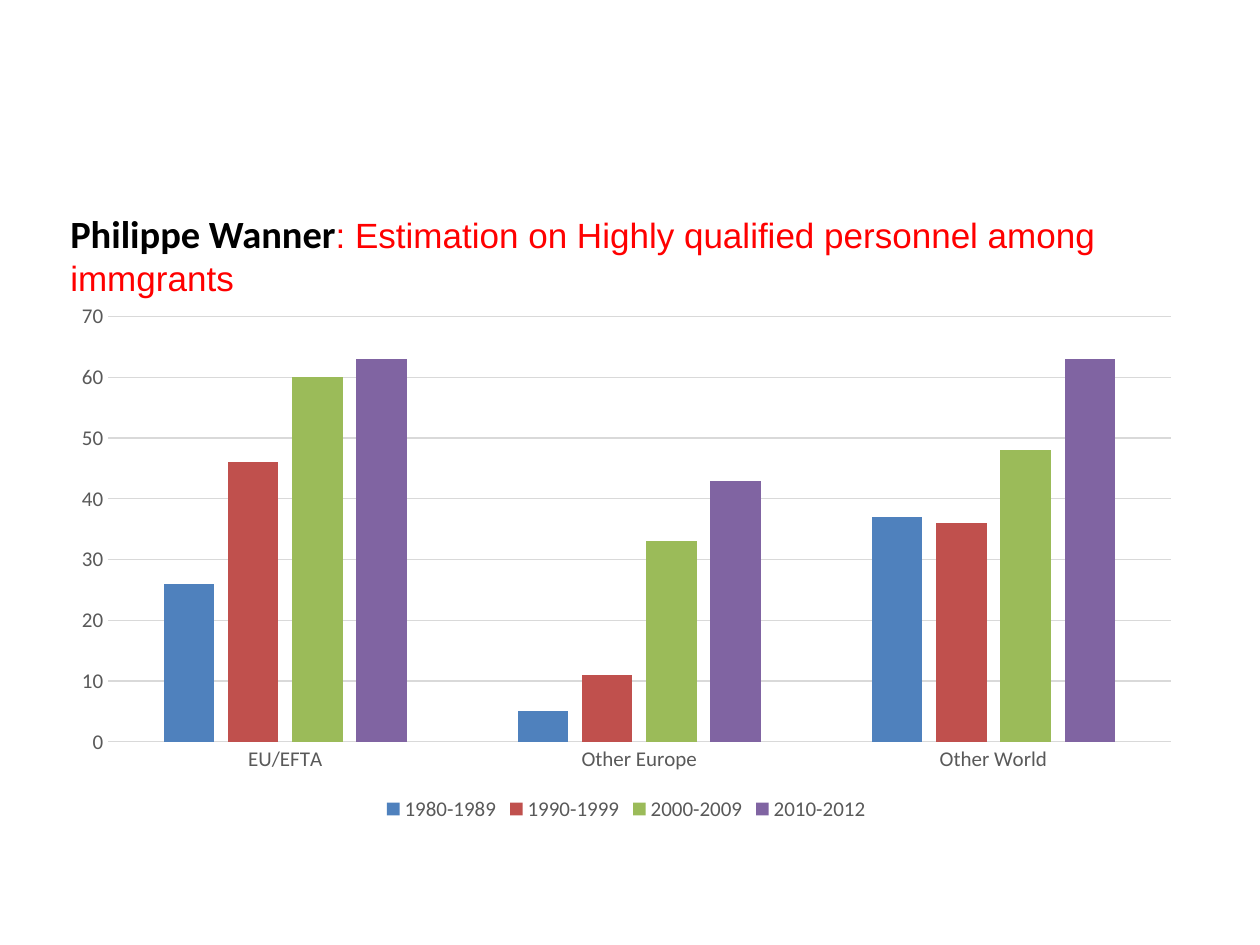
import pptx
import pptx.chart.data
import pptx.dml.color
import pptx.enum.chart
import pptx.enum.text
import pptx.util

Inches, Pt = pptx.util.Inches, pptx.util.Pt
RGBColor = pptx.dml.color.RGBColor

BLACK = RGBColor(0x00, 0x00, 0x00)
RED = RGBColor(0xFF, 0x00, 0x00)
GREY = RGBColor(0x59, 0x59, 0x59)
RULE = RGBColor(0xD9, 0xD9, 0xD9)
BLUE = RGBColor(0x4F, 0x81, 0xBD)
BRICK = RGBColor(0xC0, 0x50, 0x4D)
GREEN = RGBColor(0x9B, 0xBB, 0x59)
PURPLE = RGBColor(0x80, 0x64, 0xA2)

REGIONS = ["EU/EFTA", "Other Europe", "Other World"]
PERIODS = [
    ("1980-1989", [26, 5, 37], BLUE),
    ("1990-1999", [46, 11, 36], BRICK),
    ("2000-2009", [60, 33, 48], GREEN),
    ("2010-2012", [63, 43, 63], PURPLE),
]
HEADING = [
    ("Philippe Wanner",
     {"name": "Calibri", "size": Pt(22), "bold": True}, BLACK),
    (": Estimation on Highly qualified personnel among immgrants",
     {"name": "Arial", "size": Pt(20), "bold": False}, RED),
]
LABEL = {"name": "Calibri", "size": Pt(12), "bold": False}


def set_attrs(obj, values):
    for name, value in values.items():
        setattr(obj, name, value)


def style_font(font, values, color):
    set_attrs(font, values)
    font.color.rgb = color


def style_line(line):
    line.color.rgb = RULE
    line.width = Pt(0.75)


def add_heading(slide, left, top, width, height):
    tf = slide.shapes.add_textbox(left, top, width, height).text_frame
    set_attrs(tf, {"word_wrap": True,
                   "vertical_anchor": pptx.enum.text.MSO_ANCHOR.TOP})
    p = tf.paragraphs[0]
    for text, values, color in HEADING:
        r = p.add_run()
        r.text = text
        style_font(r.font, values, color)


def add_period_chart(slide, left, top, width, height):
    data = pptx.chart.data.CategoryChartData()
    data.categories = REGIONS
    for name, values, _ in PERIODS:
        data.add_series(name, values)
    chart = slide.shapes.add_chart(
        pptx.enum.chart.XL_CHART_TYPE.COLUMN_CLUSTERED,
        left, top, width, height, data).chart
    chart.has_title = False
    style_font(chart.font, LABEL, GREY)

    # Columns
    plot = chart.plots[0]
    set_attrs(plot, {"gap_width": 219, "overlap": -27,
                     "vary_by_categories": False})
    for series, (_, _, color) in zip(plot.series, PERIODS):
        series.format.fill.solid()
        series.format.fill.fore_color.rgb = color

    # Axes and gridlines
    for axis in (chart.category_axis, chart.value_axis):
        no_tick = pptx.enum.chart.XL_TICK_MARK.NONE
        set_attrs(axis, {"major_tick_mark": no_tick,
                         "minor_tick_mark": no_tick})
        style_font(axis.tick_labels.font, LABEL, GREY)
    style_line(chart.category_axis.format.line)
    set_attrs(chart.value_axis, {"minimum_scale": 0, "maximum_scale": 70,
                                 "major_unit": 10})
    chart.value_axis.format.line.fill.background()
    style_line(chart.value_axis.major_gridlines.format.line)

    # Legend
    chart.has_legend = True
    set_attrs(chart.legend, {
        "position": pptx.enum.chart.XL_LEGEND_POSITION.BOTTOM,
        "include_in_layout": False})
    style_font(chart.legend.font, LABEL, GREY)


def main():
    prs = pptx.Presentation()
    set_attrs(prs, {"slide_width": Inches(10), "slide_height": Inches(7.5)})
    s = prs.slides.add_slide(prs.slide_layouts[6])
    add_heading(s, Inches(0.46), Inches(1.62), Inches(9.03), Inches(0.75))
    add_period_chart(s, Inches(0.47), Inches(2.33), Inches(9), Inches(4.23))
    prs.save("out.pptx")


if __name__ == "__main__":
    main()
